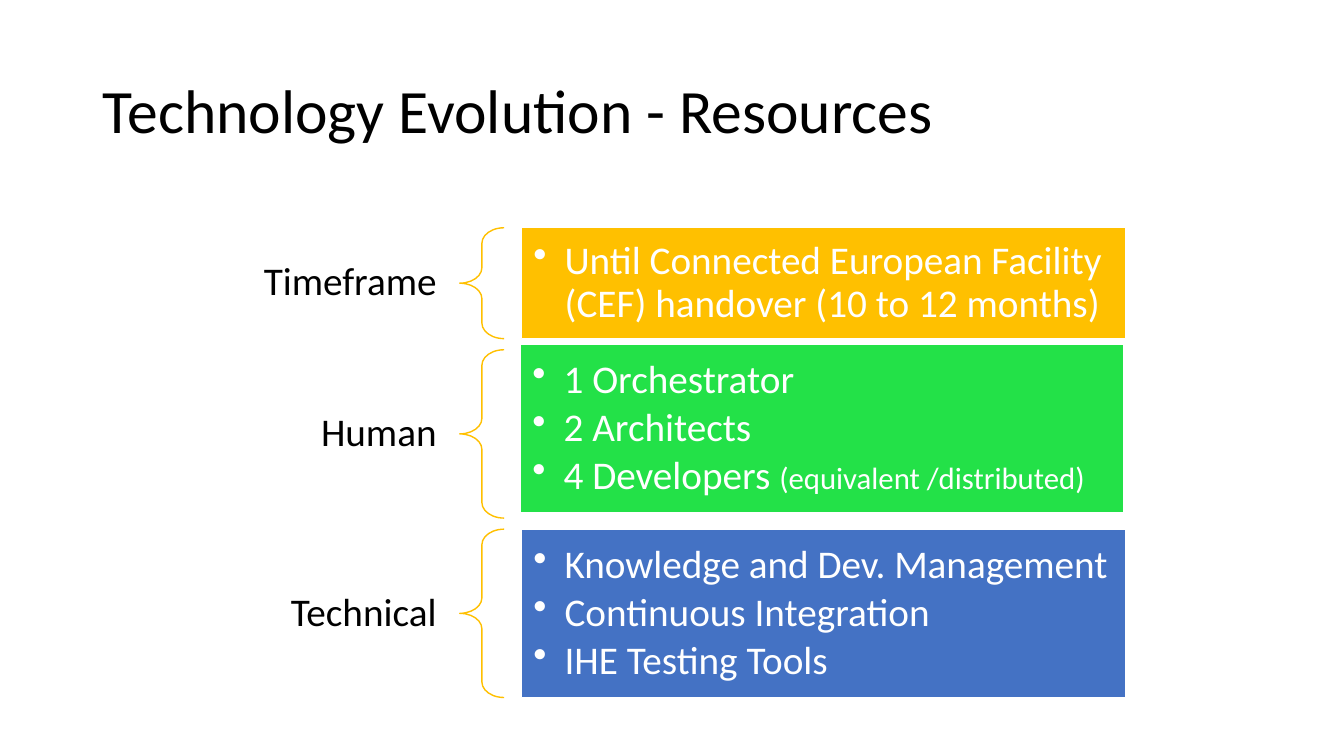
from lxml import etree
from pptx import Presentation
from pptx.dml.color import RGBColor
from pptx.enum.shapes import MSO_SHAPE
from pptx.enum.text import MSO_ANCHOR, PP_ALIGN
from pptx.oxml.ns import qn
from pptx.util import Inches, Pt

RECTANGLE, LEFT_BRACE = MSO_SHAPE.RECTANGLE, MSO_SHAPE.LEFT_BRACE
LEFT, RIGHT = PP_ALIGN.LEFT, PP_ALIGN.RIGHT
MIDDLE = MSO_ANCHOR.MIDDLE

# Content
TITLE = "Technology Evolution - Resources"
FONT = "Calibri"
BLACK, WHITE, GOLD = "000000", "FFFFFF", "FFC000"
BODY_SIZE, NOTE_SIZE = 28, 22

# Label, fill, brace top, panel left, panel top, height, items as (text, small note)
RESOURCES = [
    ("Timeframe", GOLD, 2.26, 5.17, 2.26, 1.10, [
        ("Until Connected European Facility (CEF) handover (10 to 12 months)", ""),
    ]),
    ("Human", "23E148", 3.47, 5.16, 3.42, 1.67, [
        ("1 Orchestrator", ""),
        ("2 Architects", ""),
        ("4 Developers ", "(equivalent /distributed)"),
    ]),
    ("Technical", "4472C4", 5.25, 5.17, 5.25, 1.67, [
        ("Knowledge and Dev. Management", ""),
        ("Continuous Integration", ""),
        ("IHE Testing Tools", ""),
    ]),
]
LABEL_LEFT, LABEL_WIDTH, LABEL_HEIGHT = 2.35, 2.2, 0.61
BRACE_LEFT, BRACE_WIDTH = 4.56, 0.44
PANEL_WIDTH = 5.99
BULLET_INDENT = 0.31


def color(value):
    return RGBColor.from_string(value)


def place(shape, left, top, width, height):
    shape.left, shape.top = Inches(left), Inches(top)
    shape.width, shape.height = Inches(width), Inches(height)


def set_frame(frame, side, end):
    frame.word_wrap = True
    frame.vertical_anchor = MIDDLE
    frame.margin_left = frame.margin_right = Inches(side)
    frame.margin_top = frame.margin_bottom = Inches(end)


def format_paragraph(para, size, value, align=LEFT, after=0):
    para.alignment = align
    para.line_spacing = 0.9
    para.space_after = Pt(after)
    para.font.name = FONT
    para.font.size = Pt(size)
    para.font.color.rgb = color(value)


def add_bullet(para):
    properties = para._p.get_or_add_pPr()
    properties.set("marL", str(Inches(BULLET_INDENT)))
    properties.set("indent", str(-Inches(BULLET_INDENT)))
    bullet = etree.Element(qn("a:buChar"), char="•")
    properties.insert_element_before(bullet, "a:tabLst", "a:defRPr", "a:extLst")


def add_outlined(page, kind, line_color, *bounds):
    shape = page.shapes.add_shape(kind, *map(Inches, bounds))
    shape.shadow.inherit = False
    shape.line.color.rgb = color(line_color)
    shape.line.width = Pt(1)
    return shape


def add_label(page, text, center):
    box = page.shapes.add_textbox(
        Inches(LABEL_LEFT), Inches(center - LABEL_HEIGHT / 2),
        Inches(LABEL_WIDTH), Inches(LABEL_HEIGHT))
    set_frame(box.text_frame, 0.22, 0.08)
    para = box.text_frame.paragraphs[0]
    para.text = text
    format_paragraph(para, BODY_SIZE, BLACK, RIGHT)


def add_brace(page, top, height):
    brace = add_outlined(page, LEFT_BRACE, GOLD, BRACE_LEFT, top, BRACE_WIDTH, height)
    brace.fill.background()
    brace.adjustments[0] = 0.35
    brace.adjustments[1] = 0.5


def add_panel(page, fill, left, top, height, items):
    panel = add_outlined(page, RECTANGLE, WHITE, left, top, PANEL_WIDTH, height)
    panel.fill.solid()
    panel.fill.fore_color.rgb = color(fill)
    frame = panel.text_frame
    set_frame(frame, 0.12, 0.12)
    for index, (text, note) in enumerate(items):
        para = frame.add_paragraph() if index else frame.paragraphs[0]
        para.text = text
        format_paragraph(para, BODY_SIZE, WHITE, after=4)
        add_bullet(para)
        if note:
            span = para.add_run()
            span.text = note
            span.font.size = Pt(NOTE_SIZE)


def main():
    deck = Presentation()
    deck.slide_width, deck.slide_height = Inches(13.33), Inches(7.5)
    page = deck.slides.add_slide(deck.slide_layouts[5])

    # Title
    title = page.shapes.title
    place(title, 0.92, 0.4, 11.5, 1.45)
    title.text_frame.text = TITLE
    title.text_frame.vertical_anchor = MIDDLE
    format_paragraph(title.text_frame.paragraphs[0], 44, BLACK)

    # One label, brace and panel per kind of resource
    for label, fill, brace_top, left, top, height, items in RESOURCES:
        add_label(page, label, brace_top + height / 2)
        add_brace(page, brace_top, height)
        add_panel(page, fill, left, top, height, items)

    deck.save("out.pptx")


if __name__ == "__main__":
    main()
